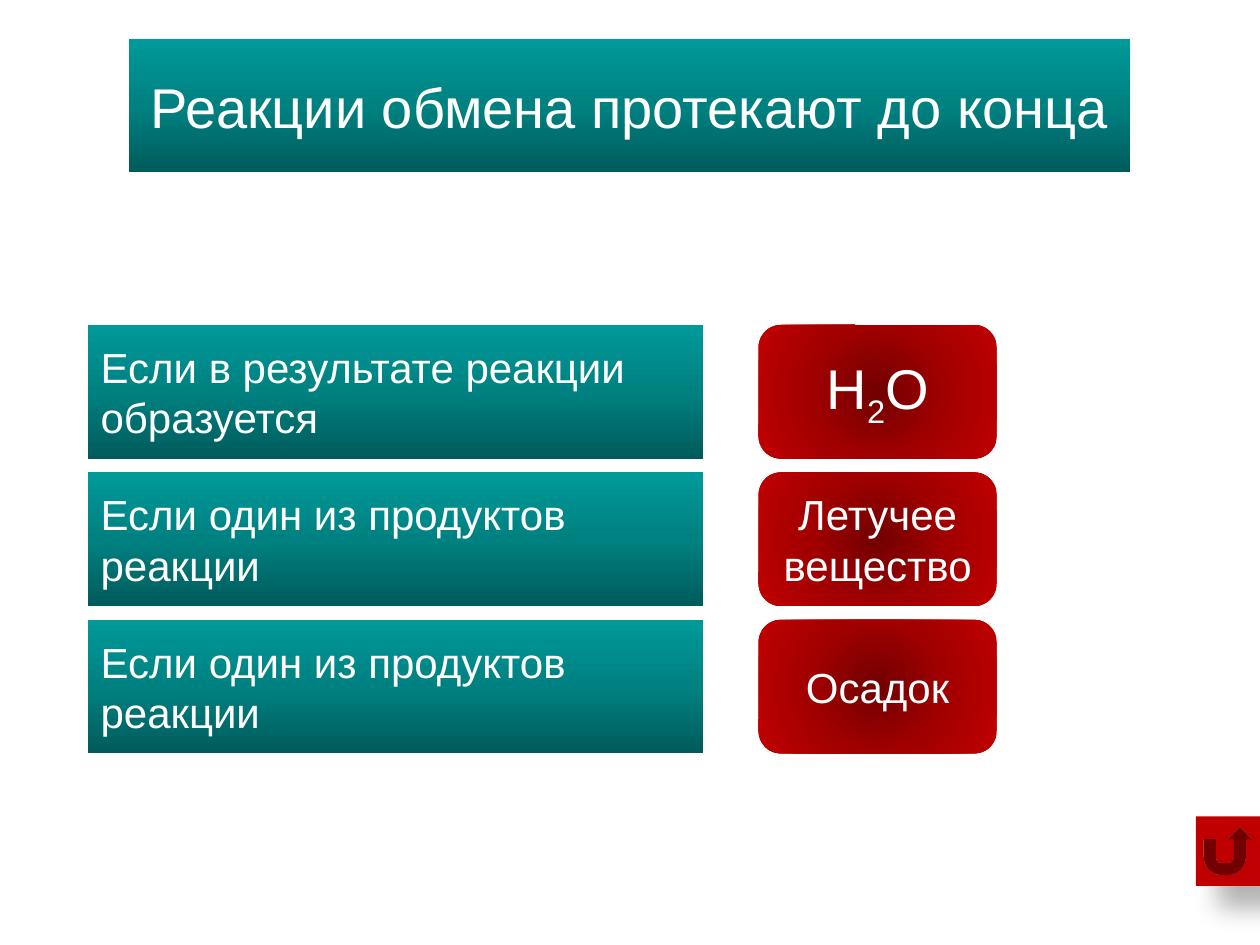
from dataclasses import dataclass

from pptx import Presentation
from pptx.dml.color import RGBColor
from pptx.enum.shapes import MSO_SHAPE as Shape
from pptx.enum.text import MSO_ANCHOR as Anchor, PP_ALIGN as Align
from pptx.oxml import parse_xml
from pptx.oxml.ns import nsdecls
from pptx.util import Inches, Pt


@dataclass(frozen=True)
class Theme:
    font: str = "Arial"
    text: str = "FFFFFF"
    button: str = "C00000"
    shadow: str = "000000"
    teal: tuple = ((0, "005B5B"), (50, "008181"), (100, "009999"))
    red: tuple = ((0, "720000"), (50, "A20000"), (100, "C00000"))
    large: int = 32
    body: int = 24


UPWARD = '<a:lin ang="16200000" scaled="1"/>'
FROM_CENTRE = ('<a:path path="circle"><a:fillToRect l="50000" t="50000" '
               'r="50000" b="50000"/></a:path>')
SUBSCRIPT = "-25000"


def fill_gradient(shape, stops, direction):
    stop_list = "".join(
        f'<a:gs pos="{place * 1000}"><a:srgbClr val="{color}"/></a:gs>'
        for place, color in stops)
    gradient = parse_xml(
        f'<a:gradFill {nsdecls("a")} rotWithShape="1">'
        f'<a:gsLst>{stop_list}</a:gsLst>{direction}</a:gradFill>')
    shape.fill.background()
    properties = shape.element.spPr
    properties.replace(properties.find("{*}noFill"), gradient)


def write_text(shape, spans, *, theme, size, align):
    """Fill the shape with one paragraph of (text, baseline) spans."""
    frame = shape.text_frame
    frame.word_wrap = True
    frame.vertical_anchor = Anchor.MIDDLE
    para = frame.paragraphs[0]
    para.alignment = align
    for text, baseline in spans:
        span = para.add_run()
        span.text = text
        span.font.name = theme.font
        span.font.size = Pt(size)
        span.font.color.rgb = RGBColor.from_string(theme.text)
        if baseline:
            span.font._element.set("baseline", baseline)


class SlideBuilder:
    """Places elements on a grid of 100 columns by 75 rows."""

    def __init__(self, deck, theme):
        self.theme = theme
        self.slide = deck.slides.add_slide(deck.slide_layouts[6])
        self.column = deck.slide_width / 100
        self.row = deck.slide_height / 75

    def shape(self, kind, left, top, width, height):
        shape = self.slide.shapes.add_shape(
            kind, round(left * self.column), round(top * self.row),
            round(width * self.column), round(height * self.row))
        shape.line.fill.background()
        shape.shadow.inherit = False
        return shape

    def banner(self, text, *area, size, align=Align.LEFT):
        box = self.shape(Shape.RECTANGLE, *area)
        fill_gradient(box, self.theme.teal, UPWARD)
        write_text(box, [(text, None)], theme=self.theme, size=size, align=align)

    def badge(self, spans, *area, size):
        box = self.shape(Shape.ROUNDED_RECTANGLE, *area)
        fill_gradient(box, self.theme.red, FROM_CENTRE)
        write_text(box, spans, theme=self.theme, size=size, align=Align.CENTER)

    def return_button(self, *area):
        button = self.shape(Shape.ACTION_BUTTON_RETURN, *area)
        button.fill.solid()
        button.fill.fore_color.rgb = RGBColor.from_string(self.theme.button)
        button.element.spPr.find("{*}effectLst").append(parse_xml(
            f'<a:outerShdw {nsdecls("a")} blurRad="{Pt(15)}" dist="{Pt(18)}" '
            f'dir="2700000" algn="tl" rotWithShape="0">'
            f'<a:srgbClr val="{self.theme.shadow}"><a:alpha val="30000"/>'
            f'</a:srgbClr></a:outerShdw>'))


def main():
    deck = Presentation()
    deck.slide_width, deck.slide_height = Inches(10), Inches(7.5)
    theme = Theme()
    page = SlideBuilder(deck, theme)
    height = 10.6
    first_row, row_step = 25.8, 11.7

    page.banner("Реакции обмена протекают до конца", 10.2, 3.1, 79.5, height,
                size=theme.large, align=Align.CENTER)

    conditions = [
        ("Если в результате реакции образуется",
         [("H", None), ("2", SUBSCRIPT), ("O", None)], theme.large),
        ("Если один из продуктов реакции",
         [("Летучее вещество", None)], theme.body),
        ("Если один из продуктов реакции",
         [("Осадок", None)], theme.body),
    ]
    for index, (condition, product, product_size) in enumerate(conditions):
        top = first_row + index * row_step
        page.banner(condition, 7, top, 48.8, height, size=theme.body)
        page.badge(product, 60.2, top, 18.9, height, size=product_size)

    page.return_button(94.9, 64.8, 5.1, 5.5)
    deck.save("out.pptx")


if __name__ == "__main__":
    main()
